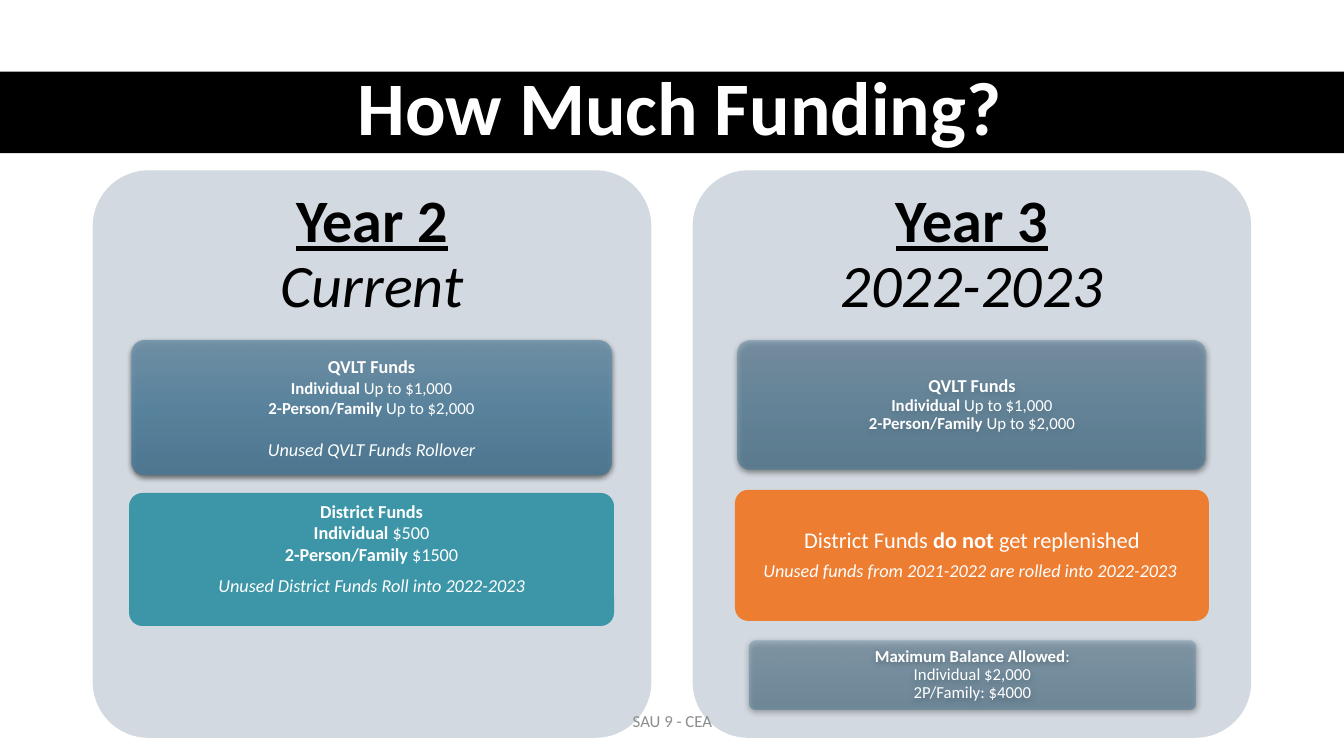
from dataclasses import dataclass
from typing import Optional

from lxml import etree
from pptx import Presentation
from pptx import util as u
from pptx.dml.color import RGBColor
from pptx.enum import shapes, text
from pptx.oxml.ns import qn

FONT = "Calibri"
BLACK = RGBColor(0x00, 0x00, 0x00)
WHITE = RGBColor(0xFF, 0xFF, 0xFF)
GREY = RGBColor(0x8C, 0x8C, 0x8C)
PANEL = RGBColor(0xD2, 0xD9, 0xE0)
TEAL = RGBColor(0x3D, 0x96, 0xA7)
ORANGE = RGBColor(0xED, 0x7D, 0x31)
STEEL = (RGBColor(0x72, 0x94, 0xAB), RGBColor(0x5A, 0x88, 0xA4),
         RGBColor(0x4D, 0x79, 0x95))

MIDDLE = text.MSO_ANCHOR.MIDDLE
TOP = text.MSO_ANCHOR.TOP
Box = tuple[float, float, float, float]


@dataclass(frozen=True)
class Run:
    text: str
    bold: bool = False
    italic: bool = False
    underline: bool = False


@dataclass(frozen=True)
class Line:
    size: float
    runs: tuple[Run, ...]
    before: float = 0
    after: float = 0


@dataclass(frozen=True)
class Card:
    """A rounded box; without a fill it gets the steel gradient at its opacity."""
    at: Box
    lines: tuple[Line, ...]
    fill: Optional[RGBColor] = None
    opacity: int = 100
    spacing: float = 0.9
    anchor: text.MSO_ANCHOR = MIDDLE


@dataclass(frozen=True)
class Year:
    left: float
    name: str
    period: str
    cards: tuple[Card, ...]


def labelled(size: float, label: str, value: str, after: float = 0) -> Line:
    return Line(size, (Run(label, bold=True), Run(value)), after=after)


TRUST = (
    Line(13, (Run("QVLT Funds", bold=True),)),
    labelled(12, "Individual ", "Up to $1,000"),
    labelled(12, "2-Person/Family ", "Up to $2,000"),
)
ROLLOVER = Line(13, (Run("Unused QVLT Funds Rollover", italic=True),), before=14.5)
DISTRICT = (
    Line(13, (Run("District Funds", bold=True),)),
    labelled(13, "Individual ", "$500"),
    labelled(13, "2-Person/Family ", "$1500", after=6),
    Line(13, (Run("Unused District Funds Roll into 2022-2023", italic=True),)),
)
NOT_REPLENISHED = (
    Line(16, (Run("District Funds "), Run("do not ", bold=True),
              Run("get replenished")), after=6),
    Line(13, (Run("Unused funds from 2021-2022 are rolled into 2022-2023 ",
                  italic=True),)),
)
MAXIMUM = (
    labelled(12, "Maximum Balance Allowed", ":"),
    Line(12, (Run("Individual $2,000"),)),
    Line(12, (Run("2P/Family: $4000"),)),
)

YEARS = (
    Year(0.92, "Year 2", "Current", (
        Card((1.31, 3.38, 4.75, 1.33), TRUST + (ROLLOVER,), opacity=90, spacing=1),
        Card((1.28, 4.89, 4.81, 1.32), DISTRICT, TEAL, spacing=1, anchor=TOP),
    )),
    Year(6.87, "Year 3", "2022-2023", (
        Card((7.32, 3.38, 4.64, 1.28), TRUST, opacity=66),
        Card((7.29, 4.86, 4.7, 1.3), NOT_REPLENISHED, ORANGE),
        Card((7.43, 6.36, 4.43, 0.68), MAXIMUM, opacity=50),
    )),
)


def write(sp, lines: tuple[Line, ...], color: RGBColor, spacing: float = 1,
          anchor: text.MSO_ANCHOR = MIDDLE, inset: tuple[float, float] = (0.1, 0.05)) -> None:
    tf = sp.text_frame
    tf.word_wrap = True
    tf.vertical_anchor = anchor
    tf.margin_left = tf.margin_right = u.Inches(inset[0])
    tf.margin_top = tf.margin_bottom = u.Inches(inset[1])
    for i, line in enumerate(lines):
        p = tf.add_paragraph() if i else tf.paragraphs[0]
        p.alignment = text.PP_ALIGN.CENTER
        p.line_spacing = spacing
        p.space_before, p.space_after = u.Pt(line.before), u.Pt(line.after)
        for run in line.runs:
            r = p.add_run()
            r.text = run.text
            r.font.name, r.font.size = FONT, u.Pt(line.size)
            r.font.bold, r.font.italic = run.bold, run.italic
            r.font.underline = run.underline
            r.font.color.rgb = color


def add_box(slide, kind: shapes.MSO_SHAPE, at: Box, fill: Optional[RGBColor]):
    sp = slide.shapes.add_shape(kind, *map(u.Inches, at))
    sp.shadow.inherit = False
    sp.line.fill.background()
    if kind == shapes.MSO_SHAPE.ROUNDED_RECTANGLE:
        sp.adjustments[0] = 0.1
    if fill is not None:
        sp.fill.solid()
        sp.fill.fore_color.rgb = fill
    return sp


def add_color(parent, color: RGBColor, opacity: int) -> None:
    clr = etree.SubElement(parent, qn("a:srgbClr"), val=str(color))
    etree.SubElement(clr, qn("a:alpha"), val=str(opacity * 1000))


def add_steel_look(sp, opacity: int) -> None:
    """Give the shape a translucent top-down gradient and a soft shadow."""
    sp.fill.gradient()
    sp.fill.gradient_angle = 270
    stops = sp.element.spPr.find(".//" + qn("a:gsLst"))
    for stop in list(stops):
        stops.remove(stop)
    for i, color in enumerate(STEEL):
        add_color(etree.SubElement(stops, qn("a:gs"), pos=str(i * 50000)), color, opacity)
    shadow = etree.SubElement(
        sp.element.spPr.find(qn("a:effectLst")), qn("a:outerShdw"),
        blurRad=str(u.Pt(4.5)), dist=str(u.Pt(1.5)), dir="5400000", rotWithShape="0")
    add_color(shadow, BLACK, 63)


def add_text(slide, at: Box, lines: tuple[Line, ...], color: RGBColor,
             spacing: float = 1) -> None:
    write(slide.shapes.add_textbox(*map(u.Inches, at)), lines, color, spacing)


def add_card(slide, card: Card) -> None:
    sp = add_box(slide, shapes.MSO_SHAPE.ROUNDED_RECTANGLE, card.at, card.fill)
    if card.fill is None:
        add_steel_look(sp, card.opacity)
    write(sp, card.lines, WHITE, card.spacing, card.anchor, (0.04, 0.03))


def add_year(slide, year: Year) -> None:
    add_box(slide, shapes.MSO_SHAPE.ROUNDED_RECTANGLE,
            (year.left, 1.69, 5.54, 5.63), PANEL)
    heading = (Line(43, (Run(year.name, bold=True, underline=True),)),
               Line(43, (Run(year.period, italic=True),)))
    add_text(slide, (year.left, 1.69, 5.54, 1.69), heading, BLACK, 0.9)
    for card in year.cards:
        add_card(slide, card)


def main() -> None:
    prs = Presentation()
    prs.slide_width, prs.slide_height = u.Inches(13.33), u.Inches(7.5)
    slide = prs.slides.add_slide(prs.slide_layouts[6])
    add_box(slide, shapes.MSO_SHAPE.RECTANGLE, (0, 0.71, 13.33, 0.81), BLACK)
    title = Line(54, (Run("How Much Funding?", bold=True),))
    add_text(slide, (0.61, 0.7, 12.26, 0.81), (title,), WHITE, 0.9)
    for year in YEARS:
        add_year(slide, year)
    add_text(slide, (4.42, 6.95, 4.5, 0.4), (Line(12, (Run("SAU 9 - CEA"),)),), GREY)
    prs.save("out.pptx")


if __name__ == "__main__":
    main()
